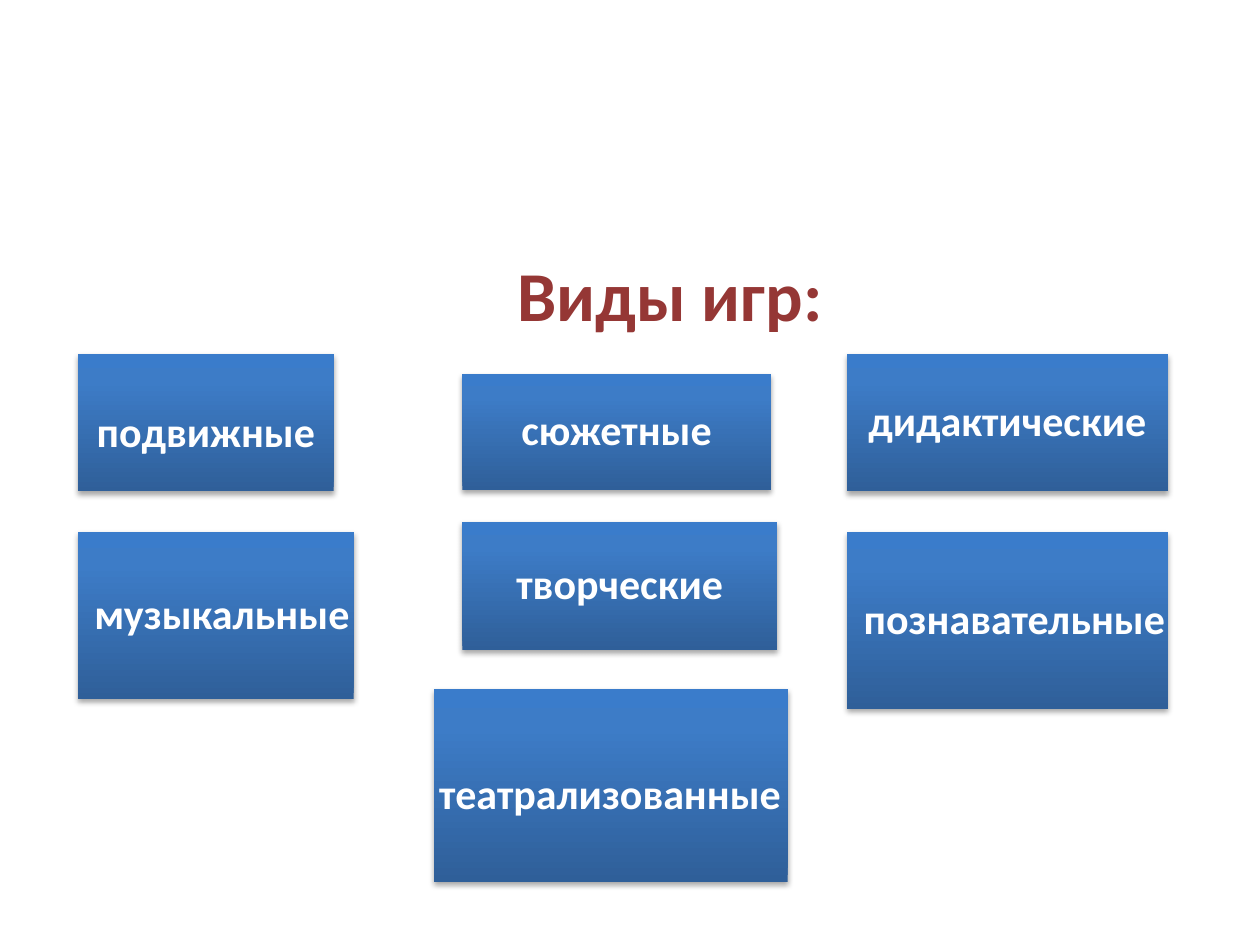
"""Build a slide that lists the kinds of games."""
from copy import deepcopy

from pptx import Presentation
from pptx.dml.color import RGBColor
from pptx.enum.shapes import MSO_SHAPE
from pptx.enum.text import MSO_ANCHOR as Anchor, MSO_AUTO_SIZE as AutoSize, PP_ALIGN as Align
from pptx.oxml import parse_xml
from pptx.oxml.ns import nsdecls, qn
from pptx.util import Cm, Pt

TITLE_RED = RGBColor(0x95, 0x37, 0x35)
WHITE = RGBColor(0xFF, 0xFF, 0xFF)
BLUES = [
    (0, RGBColor(0x2F, 0x5F, 0x99)),
    (0.8, RGBColor(0x3D, 0x7C, 0xC7)),
    (1, RGBColor(0x3A, 0x7C, 0xCB)),
]
SHADOW = (
    f'<a:outerShdw {nsdecls("a")} blurRad="40000" dist="23000" dir="5400000" rotWithShape="0">'
    '<a:srgbClr val="000000"><a:alpha val="35000"/></a:srgbClr></a:outerShdw>'
)
LEFT, MIDDLE, RIGHT = 1.57, 9.32, 17.07
CARDS = [
    ("подвижные", (LEFT, 7.14, 5.16, 2.77), (LEFT, 7.57, 5.16, 2.34)),
    ("сюжетные", (MIDDLE, 7.54, 6.22, 2.34), None),
    ("дидактические", (RIGHT, 7.14, 6.48, 2.77), None),
    ("музыкальные", (LEFT, 10.72, 5.56, 3.38), (1.4, 10.72, 6.15, 3.38)),
    ("творческие", (MIDDLE, 10.52, 6.35, 2.59), None),
    ("познавательные", (RIGHT, 10.72, 6.48, 3.58), (RIGHT, 10.72, 6.76, 3.58)),
    ("театрализованные", (8.74, 13.89, 7.14, 3.89), (8.53, 14.1, 7.54, 3.89)),
]


class GameSlide:
    font = "Calibri"
    inset = Cm(0.2)

    def __init__(self, s):
        self.s = s

    def text(self, shapes, words, box, size, color):
        tf = shapes.add_textbox(*map(Cm, box)).text_frame
        tf.word_wrap = True
        p = tf.paragraphs[0]
        p.text = words
        p.alignment = Align.CENTER
        p.font.name, p.font.size, p.font.bold = self.font, Pt(size), True
        p.font.color.rgb = color
        return tf

    def title(self, words, box):
        tf = self.text(self.s.shapes, words, box, 40, TITLE_RED)
        tf.auto_size = AutoSize.SHAPE_TO_FIT_TEXT

    def panel(self, shapes, box):
        sp = shapes.add_shape(MSO_SHAPE.RECTANGLE, *map(Cm, box))
        sp.line.fill.background()
        sp.fill.gradient()
        sp.fill.gradient_angle = 90
        stops = sp._element.spPr.find(".//" + qn("a:gsLst"))
        stops.append(deepcopy(stops[-1]))
        for stop, (position, color) in zip(sp.fill.gradient_stops, BLUES):
            stop.position = position
            stop.color.rgb = color
        sp.shadow.inherit = False
        sp._element.spPr.find(qn("a:effectLst")).append(parse_xml(SHADOW))

    def card(self, words, box, text_box=None):
        shapes = self.s.shapes.add_group_shape().shapes
        self.panel(shapes, box)
        tf = self.text(shapes, words, text_box or box, 24, WHITE)
        tf.vertical_anchor = Anchor.MIDDLE
        tf.margin_left = tf.margin_right = self.inset
        tf.margin_top = tf.margin_bottom = self.inset
        tf.paragraphs[0].line_spacing = 0.9


def main():
    prs = Presentation()
    prs.slide_width, prs.slide_height = Cm(25.4), Cm(19.05)
    slide = GameSlide(prs.slides.add_slide(prs.slide_layouts[6]))
    slide.title("Виды игр:", (2.39, 4.95, 22.23, 1.96))
    for card in CARDS:
        slide.card(*card)
    prs.save("out.pptx")


if __name__ == "__main__":
    main()
